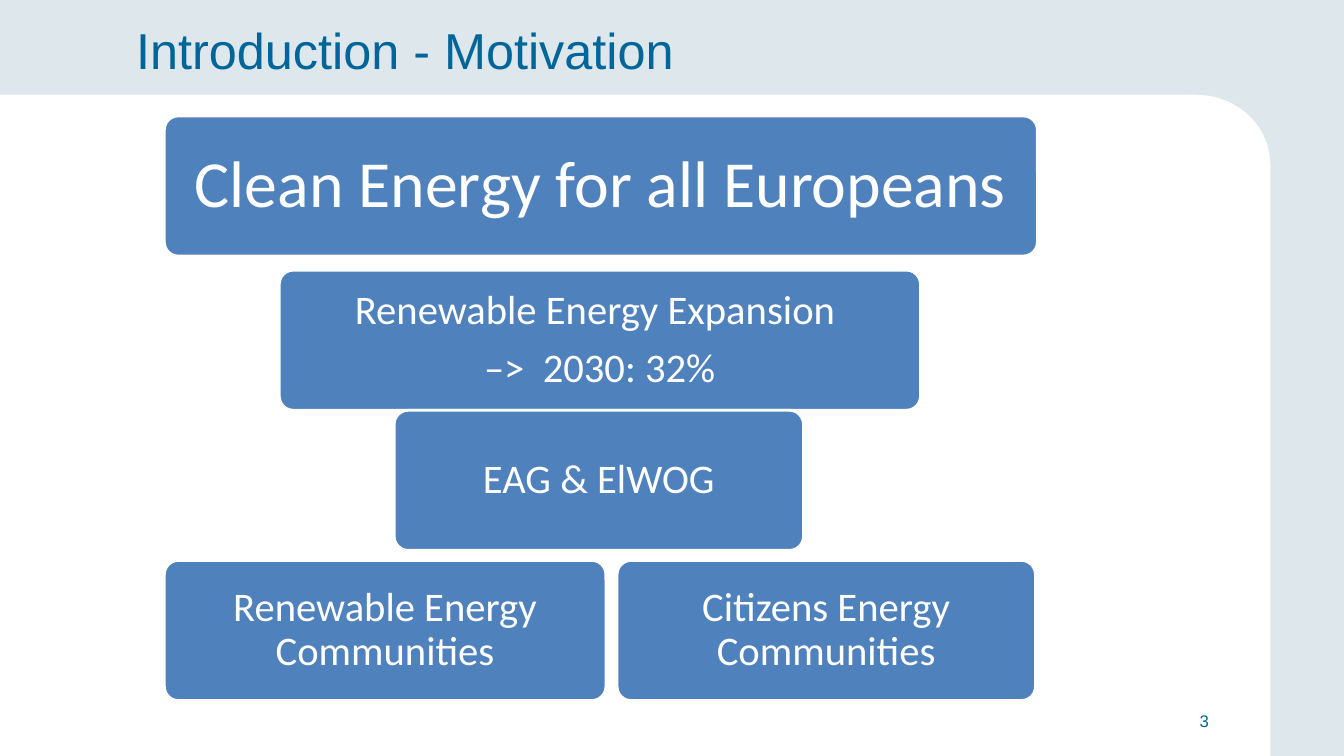
from pptx import Presentation
from pptx.dml.color import RGBColor
from pptx.enum import shapes, text
from pptx.util import Inches, Pt

COLORS = {"background": "DEE7EC", "panel": "FFFFFF", "heading": "006699",
          "box": "4F81BD", "box_text": "FFFFFF"}
BOX_HEIGHT = 1.39
# left, top, width, font size, inset, lines
BOXES = [
    (1.63, 1.15, 8.66, 47, 0.24, ["Clean Energy for all Europeans"]),
    (2.77, 2.68, 6.36, 29, 0.16, ["Renewable Energy Expansion ", "–>  2030: 32%"]),
    (1.63, 5.56, 4.38, 29, 0.16, ["Renewable Energy Communities"]),
    (3.91, 4.07, 4.06, 29, 0.16, ["EAG & ElWOG"]),
    (6.12, 5.56, 4.15, 29, 0.16, ["Citizens Energy Communities"]),
]


def color(name):
    return RGBColor.from_string(COLORS[name])


def set_attrs(obj, values):
    for name, value in values.items():
        setattr(obj, name, value)


def set_font(p, name, size, color_name):
    set_attrs(p.font, {"name": name, "size": Pt(size), "bold": False})
    p.font.color.rgb = color(color_name)


def add_filled(s, kind, box, fill):
    sp = s.shapes.add_shape(kind, *map(Inches, box))
    sp.shadow.inherit = False
    sp.fill.solid()
    sp.fill.fore_color.rgb = color(fill)
    sp.line.fill.background()
    return sp


def add_panel(s, left, top, right, bottom):
    """White panel with a rounded top right corner."""
    corner_w, corner_h = 1.48, 1.39
    kinds = shapes.MSO_SHAPE
    curve_left, curve_mid = right - corner_w, top + corner_h / 2
    for kind, box in [
        (kinds.RECTANGLE, (left, top, curve_left + corner_w / 2 - left, bottom - top)),
        (kinds.OVAL, (curve_left, top, corner_w, corner_h)),
        (kinds.RECTANGLE, (7.14, curve_mid, right - 7.14, bottom - curve_mid)),
    ]:
        add_filled(s, kind, box, "panel")


def add_title(s, left, top, width, height):
    sp = s.shapes.title
    set_attrs(sp, {"left": Inches(left), "top": Inches(top),
                   "width": Inches(width), "height": Inches(height)})
    tf = sp.text_frame
    tf.text = "Introduction - Motivation"
    set_attrs(tf, {"vertical_anchor": text.MSO_ANCHOR.BOTTOM, "word_wrap": True,
                   "auto_size": text.MSO_AUTO_SIZE.NONE})
    p = tf.paragraphs[0]
    p.alignment = text.PP_ALIGN.LEFT
    set_font(p, "Arial", 36, "heading")


def add_page_number(s, left, top, width, height):
    tf = s.shapes.add_textbox(*map(Inches, (left, top, width, height))).text_frame
    set_attrs(tf, {"text": "3", "word_wrap": True,
                   "vertical_anchor": text.MSO_ANCHOR.MIDDLE})
    p = tf.paragraphs[0]
    p.alignment = text.PP_ALIGN.RIGHT
    set_font(p, "Arial", 12, "heading")


def add_box(s, left, top, width, size, inset, lines):
    sp = add_filled(s, shapes.MSO_SHAPE.ROUNDED_RECTANGLE,
                    (left, top, width, BOX_HEIGHT), "box")
    sp.adjustments[0] = 0.1
    sp.line.color.rgb = color("panel")
    sp.line.width = Pt(2)
    tf = sp.text_frame
    tf.text = "\n".join(lines)
    set_attrs(tf, {"word_wrap": True, "vertical_anchor": text.MSO_ANCHOR.MIDDLE})
    set_attrs(tf, {f"margin_{side}": Inches(inset)
                   for side in ("left", "top", "right", "bottom")})
    for p in tf.paragraphs:
        set_attrs(p, {"alignment": text.PP_ALIGN.CENTER, "line_spacing": 0.9})
        set_font(p, "Calibri", size, "box_text")
    for p in tf.paragraphs[:-1]:
        p.space_after = Pt(10)


def main():
    prs = Presentation()
    set_attrs(prs, {"slide_width": Inches(13.33), "slide_height": Inches(7.5)})
    s = prs.slides.add_slide(prs.slide_layouts[5])
    s.background.fill.solid()
    s.background.fill.fore_color.rgb = color("background")
    add_panel(s, 0, 0.94, 12.6, 7.5)
    add_page_number(s, 9.56, 6.95, 2.53, 0.4)
    add_title(s, 1.25, 0.13, 10.83, 0.71)
    for box in BOXES:
        add_box(s, *box)
    prs.save("out.pptx")


if __name__ == "__main__":
    main()
